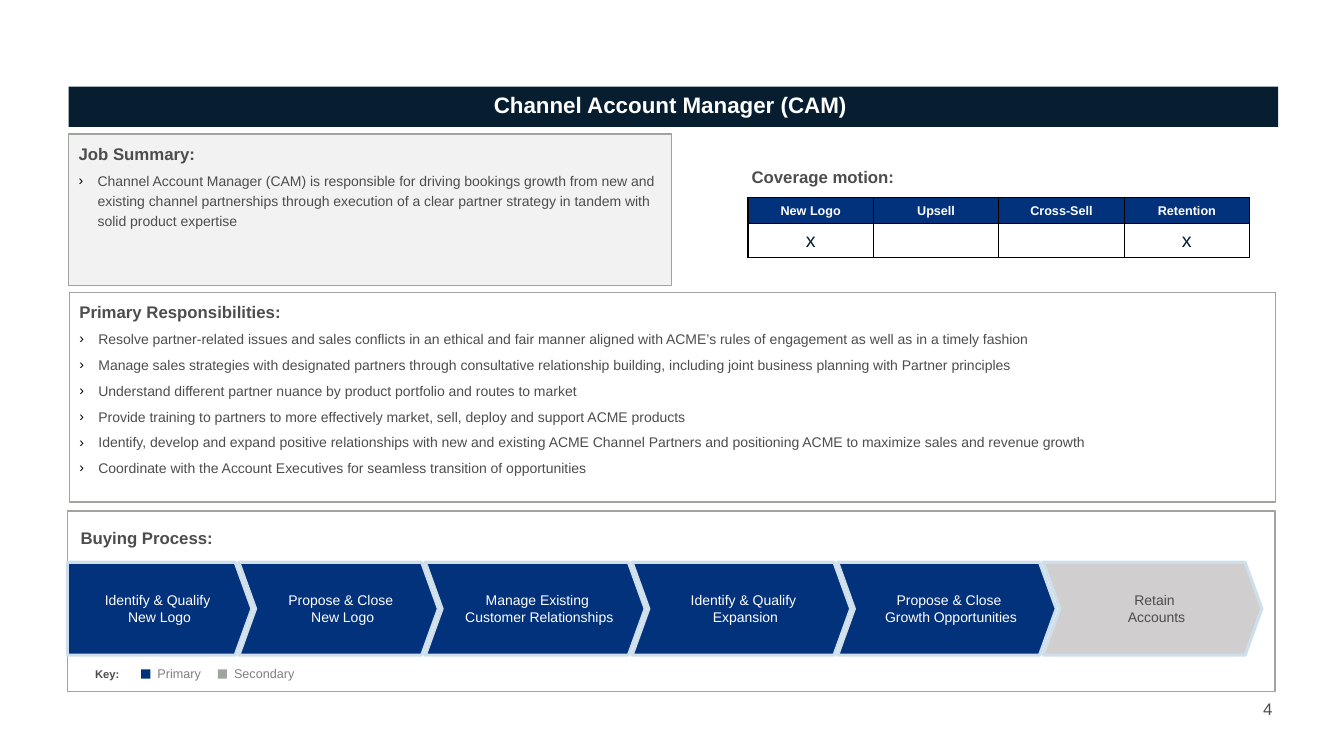
import pptx
import pptx.util
import pptx.oxml
from pptx.dml.color import RGBColor
from pptx.enum.shapes import MSO_SHAPE
from pptx.enum.text import MSO_ANCHOR, MSO_AUTO_SIZE, PP_ALIGN
from pptx.oxml.ns import nsdecls, qn
from pptx.util import Cm

NAVY = RGBColor(0x07, 0x1E, 0x31)
BLUE = RGBColor(0x03, 0x32, 0x7C)
PALE_BLUE = RGBColor(0xCE, 0xDF, 0xEB)
WHITE = RGBColor(0xFF, 0xFF, 0xFF)
LIGHT_GRAY = RGBColor(0xF2, 0xF2, 0xF2)
SILVER = RGBColor(0xD0, 0xCE, 0xCE)
GRAY = RGBColor(0x9F, 0xA4, 0x9F)
LABEL_GRAY = RGBColor(0x7F, 0x7F, 0x7F)
DARK_GRAY = RGBColor(0x4D, 0x4D, 0x4D)

RESPONSIBILITIES = [
    "Resolve partner-related issues and sales conflicts in an ethical and fair manner aligned with ACME’s rules of engagement as well as in a timely fashion",
    "Manage sales strategies with designated partners through consultative relationship building, including joint business planning with Partner principles",
    "Understand different partner nuance by product portfolio and routes to market",
    "Provide training to partners to more effectively market, sell, deploy and support ACME products",
    "Identify, develop and expand positive relationships with new and existing ACME Channel Partners and positioning ACME to maximize sales and revenue growth",
    "Coordinate with the Account Executives for seamless transition of opportunities",
]
# Text, width in cm, fill, text colour
STAGES = [
    ("Identify & Qualify \vNew Logo", 4.65, BLUE, WHITE),
    ("Propose & Close \vNew Logo", 5.03, BLUE, WHITE),
    ("Manage Existing \vCustomer Relationships", 5.54, BLUE, WHITE),
    ("Identify & Qualify \vExpansion", 5.51, BLUE, WHITE),
    ("Propose & Close \vGrowth Opportunities", 5.51, BLUE, WHITE),
    ("Retain \nAccounts", 5.51, SILVER, DARK_GRAY),
]


class RoleSlide:
    font_name = "Arial"

    def __init__(self, presentation):
        self.slide = presentation.slides.add_slide(presentation.slide_layouts[3])

    def set_font(self, paragraph, size, color, bold=False):
        font = paragraph.font
        font.name, font.size, font.bold = self.font_name, pptx.util.Pt(size), bold
        font.color.rgb = color

    def place(self, shape, left, top, width, height):
        shape.left, shape.top = Cm(left), Cm(top)
        shape.width, shape.height = Cm(width), Cm(height)

    def paint(self, shape, fill, line=None, line_width=1):
        if fill is None:
            shape.fill.background()
        else:
            shape.fill.solid()
            shape.fill.fore_color.rgb = fill
        if line is None:
            shape.line.fill.background()
        else:
            shape.line.color.rgb = line
            shape.line.width = pptx.util.Pt(line_width)

    def set_text(self, frame, text, size, color, bold=False, align=PP_ALIGN.LEFT,
                 anchor=MSO_ANCHOR.TOP, margins=(0.25, 0.13, 0.25, 0.13)):
        frame.text = text
        frame.word_wrap = True
        frame.auto_size = MSO_AUTO_SIZE.NONE
        frame.vertical_anchor = anchor
        (frame.margin_left, frame.margin_top,
         frame.margin_right, frame.margin_bottom) = map(Cm, margins)
        for paragraph in frame.paragraphs:
            paragraph.alignment = align
            self.set_font(paragraph, size, color, bold)

    def title(self, text, box):
        shape = self.slide.shapes.title
        self.place(shape, *box)
        self.paint(shape, NAVY)
        self.set_text(shape.text_frame, text, 16, WHITE, True, PP_ALIGN.CENTER,
                      MSO_ANCHOR.MIDDLE, (0, 0, 0, 0))
        shape.text_frame.paragraphs[0].line_spacing = 0.9

    def list_box(self, index, heading, items, box, fill):
        shape = self.slide.placeholders[index]
        self.place(shape, *box)
        self.paint(shape, fill, GRAY)
        frame = shape.text_frame
        self.set_text(frame, "\n".join([heading, *items]), 10, DARK_GRAY)
        for number, paragraph in enumerate(frame.paragraphs):
            paragraph.line_spacing = 1.2
            paragraph.space_before = pptx.util.Pt(2 if number else 0)
            paragraph.space_after = pptx.util.Pt(2)
            properties = paragraph._p.get_or_add_pPr()
            indent = Cm(0.48) if number else 0
            properties.set("marL", str(indent))
            properties.set("indent", str(-indent))
            bullet = [f'<a:buClr {nsdecls("a")}><a:srgbClr val="000000"/></a:buClr>',
                      f'<a:buFont {nsdecls("a")} typeface="{self.font_name}"/>',
                      f'<a:buChar {nsdecls("a")} char="›"/>']
            font_element = properties.find(qn("a:defRPr"))
            for xml in bullet if number else [f'<a:buNone {nsdecls("a")}/>']:
                font_element.addprevious(pptx.oxml.parse_xml(xml))
        self.set_font(frame.paragraphs[0], 12, DARK_GRAY, True)

    def label(self, text, box, size=12, color=DARK_GRAY, bold=True, **layout):
        shape = self.slide.shapes.add_textbox(*map(Cm, box))
        self.set_text(shape.text_frame, text, size, color, bold, **layout)

    def shape(self, kind, box, fill, line=None, line_width=1):
        shape = self.slide.shapes.add_shape(kind, *map(Cm, box))
        shape.shadow.inherit = False
        self.paint(shape, fill, line, line_width)
        return shape

    def stage(self, kind, box, text, fill, color):
        shape = self.shape(kind, box, fill, PALE_BLUE, 2.25)
        shape.adjustments[0] = 0.18
        self.set_text(shape.text_frame, text, 10, color, align=PP_ALIGN.CENTER,
                      anchor=MSO_ANCHOR.MIDDLE, margins=(0.2, 0.3, 0, 0.3))

    def table(self, rows, left, top, column_width, heights):
        columns = len(rows[0])
        table = self.slide.shapes.add_table(
            len(rows), columns, Cm(left), Cm(top),
            Cm(column_width * columns), Cm(sum(heights))).table
        table.horz_banding = False
        for column in table.columns:
            column.width = Cm(column_width)
        for row_index, (values, height) in enumerate(zip(rows, heights)):
            table.rows[row_index].height = Cm(height)
            for column_index, value in enumerate(values):
                self.cell(table.cell(row_index, column_index), value, row_index == 0)

    def cell(self, cell, value, header):
        cell.text = value
        cell.vertical_anchor = MSO_ANCHOR.MIDDLE
        cell.margin_top = cell.margin_bottom = 0
        paragraph = cell.text_frame.paragraphs[0]
        paragraph.alignment = PP_ALIGN.CENTER
        if header:
            cell.fill.solid()
            cell.fill.fore_color.rgb = BLUE
            self.set_font(paragraph, 9, WHITE, True)
        else:
            cell.fill.background()
            self.set_font(paragraph, 14, NAVY)
        for position, side in enumerate("LRTB"):
            cell._tc.get_or_add_tcPr().insert(position, pptx.oxml.parse_xml(
                f'<a:ln{side} {nsdecls("a")} w="12700"><a:solidFill>'
                f'<a:srgbClr val="000000"/></a:solidFill></a:ln{side}>'))


def main():
    presentation = pptx.Presentation()
    presentation.slide_width, presentation.slide_height = Cm(33.87), Cm(19.05)
    page = RoleSlide(presentation)

    # Title and page number
    page.title("Channel Account Manager (CAM) ", (1.73, 2.18, 30.48, 1.02))
    page.label("4", (31.83, 17.6, 0.86, 0.51), bold=False,
               anchor=MSO_ANCHOR.MIDDLE, margins=(0, 0, 0, 0))

    # Summary and responsibilities
    page.list_box(1, "Job Summary:", [
        "Channel Account Manager (CAM) is responsible for driving bookings growth from new and existing channel partnerships through execution of a clear partner strategy in tandem with solid product expertise",
    ], (1.73, 3.38, 15.19, 3.81), LIGHT_GRAY)
    page.list_box(2, "Primary Responsibilities:", RESPONSIBILITIES,
                  (1.75, 7.37, 30.4, 5.28), WHITE)

    # Coverage motion
    page.label("Coverage motion:", (18.69, 4.06, 5.94, 0.71))
    page.table([["New Logo", "Upsell", "Cross-Sell", "Retention"],
                ["x", "", "", "x"]], 18.85, 4.98, 3.16, (0.66, 0.84))

    # Buying process
    page.shape(MSO_SHAPE.RECTANGLE, (1.7, 12.88, 30.43, 4.55), None, GRAY)
    page.label("Buying Process:", (1.78, 13.18, 8.53, 0.71))
    left, overlap = 1.7, 0.33
    for number, (text, width, fill, color) in enumerate(STAGES):
        kind = MSO_SHAPE.CHEVRON if number else MSO_SHAPE.PENTAGON
        page.stage(kind, (left, 14.17, width, 2.34), text, fill, color)
        left += width - overlap

    # Key
    page.label("Key:", (1.7, 16.69, 2.01, 0.56), 8, align=PP_ALIGN.CENTER)
    for text, left, width, fill in [("Primary", 3.56, 1.91, BLUE),
                                    ("Secondary", 5.49, 2.44, GRAY)]:
        page.shape(MSO_SHAPE.RECTANGLE, (left, 16.87, 0.23, 0.23), fill)
        page.label(text, (left + 0.16, 16.66, width, 0.58), 9, LABEL_GRAY, False)

    presentation.save("out.pptx")


if __name__ == "__main__":
    main()
